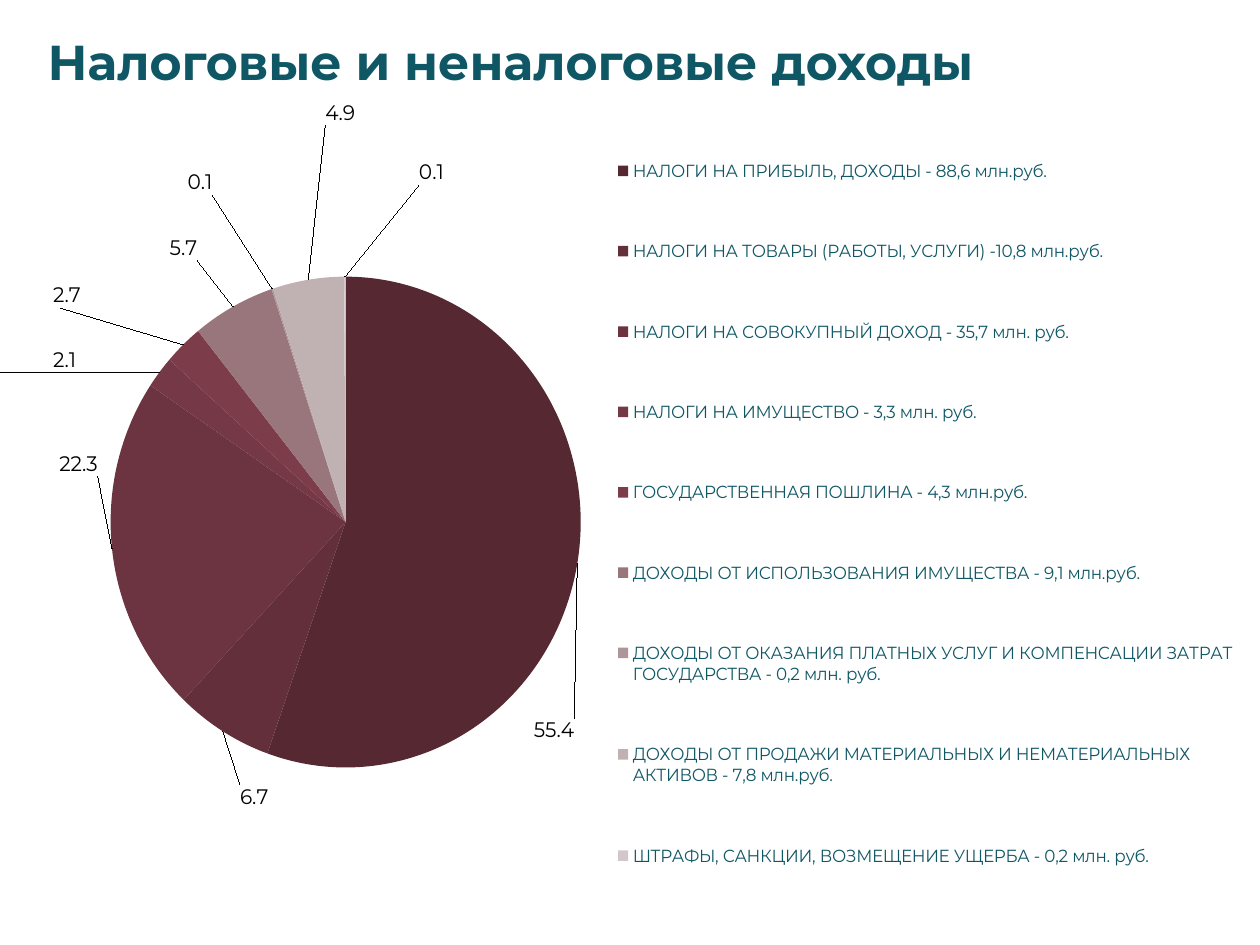
from dataclasses import dataclass
from math import cos, pi, sin

from lxml import etree
from pptx import Presentation
from pptx.chart.data import CategoryChartData as Data
from pptx.dml.color import RGBColor as Color
from pptx.enum.chart import XL_CHART_TYPE as Kind
from pptx.enum.chart import XL_LABEL_POSITION as Spot
from pptx.enum.chart import XL_LEGEND_POSITION as Side
from pptx.enum.text import MSO_ANCHOR as Anchor
from pptx.enum.text import MSO_AUTO_SIZE as Fit
from pptx.enum.text import PP_ALIGN as Align
from pptx.oxml.ns import qn
from pptx.util import Pt


@dataclass(frozen=True)
class Theme:
    face: str = "Montserrat"
    teal: str = "105766"
    ink: str = "000000"
    head: int = 28
    label: int = 12
    key: int = 10
    wedges: tuple = ("562932", "622F3A", "6B3440", "743846", "7D3C4A",
                     "99767B", "AD9699", "C0B2B3", "D2C8CA")


THEME = Theme()
WIDE, HIGH = 1260, 945

# Name, value, and centre of the label in px of the unscaled chart
ROWS = [
    ("НАЛОГИ НА ПРИБЫЛЬ, ДОХОДЫ - 88,6 млн.руб.", 55.4, (523, 731)),
    ("НАЛОГИ НА ТОВАРЫ (РАБОТЫ, УСЛУГИ) -10,8 млн.руб.", 6.7, (209, 798)),
    ("НАЛОГИ НА СОВОКУПНЫЙ ДОХОД - 35,7 млн. руб.", 22.3, (24, 464)),
    ("НАЛОГИ НА ИМУЩЕСТВО - 3,3 млн. руб.", 2.1, (-72, 361)),
    ("ГОСУДАРСТВЕННАЯ ПОШЛИНА - 4,3 млн.руб.", 2.7, (-8, 296)),
    ("ДОХОДЫ ОТ ИСПОЛЬЗОВАНИЯ ИМУЩЕСТВА - 9,1 млн.руб.", 5.7, (135, 248)),
    ("ДОХОДЫ ОТ ОКАЗАНИЯ ПЛАТНЫХ УСЛУГ И КОМПЕНСАЦИИ ЗАТРАТ "
     "ГОСУДАРСТВА - 0,2 млн. руб.", 0.1, (151, 183)),
    ("ДОХОДЫ ОТ ПРОДАЖИ МАТЕРИАЛЬНЫХ И НЕМАТЕРИАЛЬНЫХ "
     "АКТИВОВ - 7,8 млн.руб.", 4.9, (300, 113)),
    ("ШТРАФЫ, САНКЦИИ, ВОЗМЕЩЕНИЕ УЩЕРБА - 0,2 млн. руб.", 0.1, (394, 173)),
]


def px(n):
    return round(n * 914400 / 126)


def style(font, size, tint, bold=False):
    font.name, font.size, font.bold = THEME.face, Pt(size), bold
    font.color.rgb = Color.from_string(tint)


def write(frame, text, size, tint, bold=False, align=Align.LEFT):
    para = frame.paragraphs[0]
    para.alignment = align
    run = para.add_run()
    run.text = text
    style(run.font, size, tint, bold)


def place(node, index, **parts):
    """Give a chart part a manual layout; lengths are shares of the chart."""
    for old in node.findall(qn("c:layout")):
        node.remove(old)
    layout = etree.Element(qn("c:layout"))
    manual = etree.SubElement(layout, qn("c:manualLayout"))
    for name, val in parts.items():
        etree.SubElement(manual, qn("c:" + name)).set("val", str(val))
    node.insert(index, layout)


def share(box, frame):
    """Express a box as shares of the frame around it."""
    x, y, w, h = box
    left, top, wide, high = frame
    return dict(x=round((x - left) / wide, 3), y=round((y - top) / high, 3),
                w=round(w / wide, 3), h=round(h / high, 3))


def add_title(slide, box):
    title = slide.shapes.title
    title.left, title.top, title.width, title.height = map(px, box)
    frame = title.text_frame
    frame.word_wrap = True
    frame.auto_size = Fit.NONE
    frame.vertical_anchor = Anchor.MIDDLE
    write(frame, "Налоговые и неналоговые доходы", THEME.head, THEME.teal,
          bold=True)


def add_key(chart, frame, box):
    chart.has_legend = True
    key = chart.legend
    key.position = Side.LEFT
    key.include_in_layout = True
    style(key.font, THEME.key, THEME.teal)
    place(key._element, 1, xMode="edge", yMode="edge", **share(box, frame))


def add_labels(series, frame, pie):
    labels = series.data_labels
    labels.show_value = True
    labels.number_format, labels.number_format_is_linked = "0.0", False
    labels.position = Spot.BEST_FIT
    style(labels.font, THEME.label, THEME.ink)

    # Each label is shifted from its usual place just off the rim of its wedge
    x, y, w, h = pie
    radius = min(w, h) / 2 + 8
    total, done = sum(row[1] for row in ROWS), 0
    for i, (_, val, (goal_x, goal_y)) in enumerate(ROWS):
        turn = 2 * pi * (done + val / 2) / total
        done += val
        dx, dy = sin(turn), -cos(turn)
        half = 21 if val >= 10 else 15
        side = 0 if abs(dx) < 0.08 else half if dx > 0 else -half
        rim_x = x + w / 2 + radius * dx + side
        rim_y = y + h / 2 + radius * dy + (12 if dy > 0 else -12)
        label = series.points[i].data_label
        style(label.font, THEME.label, THEME.ink)
        label.position = Spot.BEST_FIT
        node = series._element.xpath(f".//c:dLbl[c:idx/@val='{i}']")[0]
        place(node, 1, x=round((goal_x - rim_x) / frame[2], 3),
              y=round((goal_y - rim_y) / frame[3], 3))

    # Leader lines
    group = labels._element
    lead = group.find(qn("c:showLeaderLines"))
    if lead is None:
        lead = etree.SubElement(group, qn("c:showLeaderLines"))
    lead.set("val", "1")


def add_pie(slide, frame, pie, key):
    data = Data(number_format="0.0")
    data.categories = [row[0] for row in ROWS]
    data.add_series("Series 1", [row[1] for row in ROWS])
    chart = slide.shapes.add_chart(Kind.PIE, *map(px, frame), data).chart
    chart.has_title = False
    style(chart.font, THEME.key, THEME.ink)

    # Wedges
    plot = chart.plots[0]
    plot.vary_by_categories = True
    series = plot.series[0]
    for i, tint in enumerate(THEME.wedges):
        form = series.points[i].format
        form.fill.solid()
        form.fill.fore_color.rgb = Color.from_string(tint)
        form.line.fill.background()
    area = chart._chartSpace.chart.plotArea
    place(area, 0, layoutTarget="inner", xMode="edge", yMode="edge",
          **share(pie, frame))

    add_labels(series, frame, pie)
    add_key(chart, frame, key)


def main():
    deck = Presentation()
    deck.slide_width, deck.slide_height = px(WIDE), px(HIGH)
    slide = deck.slides.add_slide(deck.slide_layouts[5])
    add_pie(slide, frame=(0, 101, 1255, 825), pie=(41, 277, 528, 491),
            key=(569, 101, 684, 825))
    add_title(slide, (35, 25, 1005, 72))
    deck.save("out.pptx")


if __name__ == "__main__":
    main()
